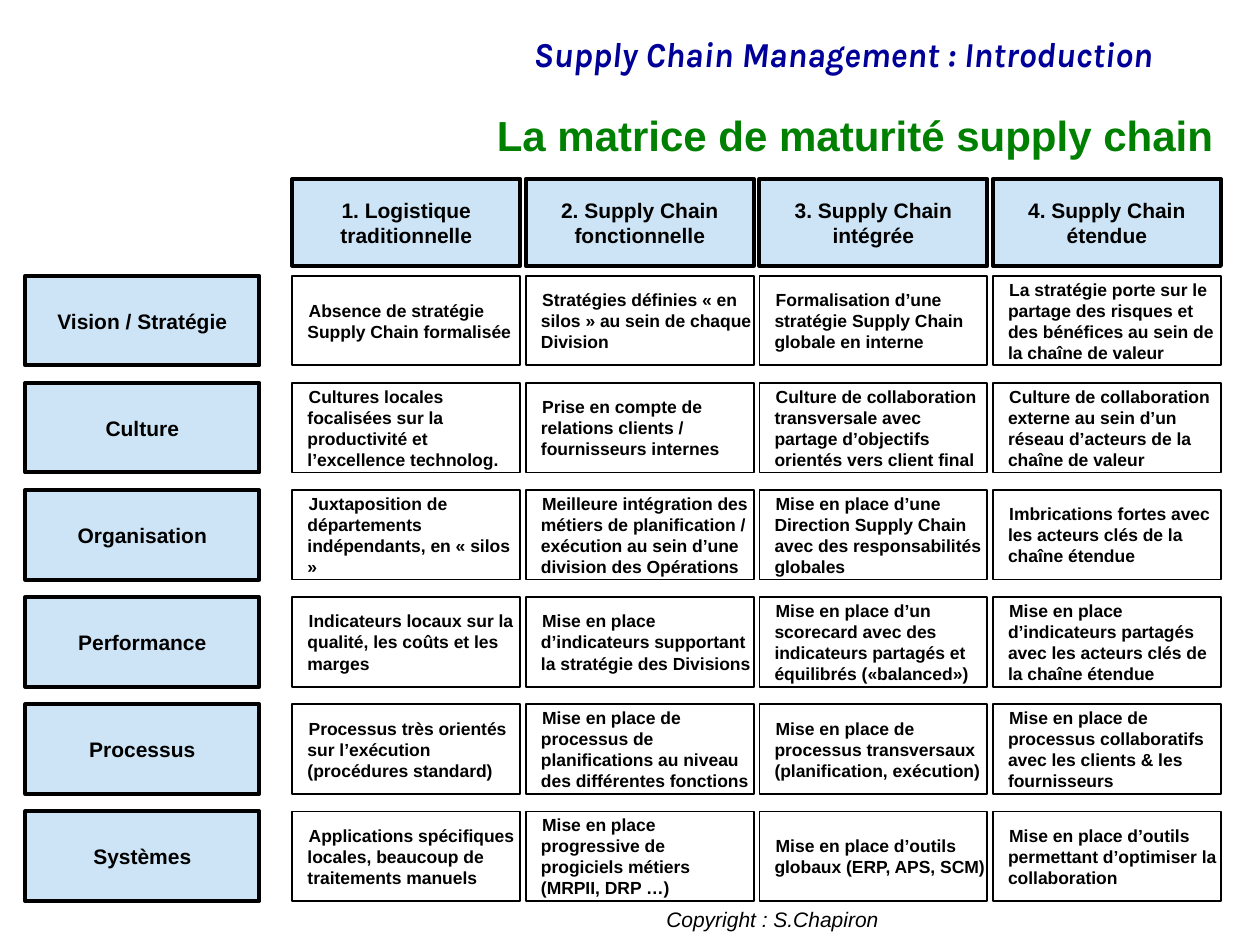
from pptx import Presentation
from pptx.dml.color import RGBColor
from pptx.enum.shapes import MSO_SHAPE
from pptx.enum.text import MSO_ANCHOR, MSO_AUTO_SIZE, PP_ALIGN
from pptx.util import Inches, Pt

BLACK = RGBColor(0x00, 0x00, 0x00)
PALE_BLUE = RGBColor(0xCC, 0xE4, 0xF5)
NAVY = RGBColor(0x00, 0x00, 0x99)
GREEN = RGBColor(0x00, 0x80, 0x00)

STAGES = [
    "1. Logistique\ntraditionnelle",
    "2. Supply Chain\nfonctionnelle",
    "3. Supply Chain\nintégrée",
    "4. Supply Chain\nétendue",
]
MATRIX = {
    "Vision / Stratégie": [
        "Absence de stratégie Supply Chain formalisée",
        "Stratégies définies « en silos » au sein de chaque Division",
        "Formalisation d’une stratégie Supply Chain globale en interne",
        "La stratégie porte sur le partage des risques et des bénéfices au sein de la chaîne de valeur",
    ],
    "Culture": [
        "Cultures locales focalisées sur la productivité et l’excellence technolog.",
        "Prise en compte de relations clients / fournisseurs internes",
        "Culture de collaboration transversale avec partage d’objectifs orientés vers client final",
        "Culture de collaboration externe au sein d’un réseau d’acteurs de la chaîne de valeur",
    ],
    "Organisation": [
        "Juxtaposition de départements indépendants, en « silos »",
        "Meilleure intégration des métiers de planification / exécution au sein d’une division des Opérations",
        "Mise en place d’une Direction Supply Chain avec des responsabilités globales",
        "Imbrications fortes avec les acteurs clés de la chaîne étendue",
    ],
    "Performance": [
        "Indicateurs locaux sur la qualité, les coûts et les marges",
        "Mise en place d’indicateurs supportant la stratégie des Divisions",
        "Mise en place d’un scorecard avec des indicateurs partagés et équilibrés («balanced»)",
        "Mise en place d’indicateurs partagés avec les acteurs clés de la chaîne étendue",
    ],
    "Processus": [
        "Processus très orientés sur l’exécution (procédures standard)",
        "Mise en place de processus de planifications au niveau des différentes fonctions",
        "Mise en place de processus transversaux (planification, exécution)",
        "Mise en place de processus collaboratifs avec les clients & les fournisseurs",
    ],
    "Systèmes": [
        "Applications spécifiques locales, beaucoup de traitements manuels",
        "Mise en place progressive de progiciels métiers (MRPII, DRP …)",
        "Mise en place d’outils globaux (ERP, APS, SCM)",
        "Mise en place d’outils permettant d’optimiser la collaboration",
    ],
}


def write_text(frame, text, size, color=BLACK, font="Arial", bold=True, italic=False,
               align=PP_ALIGN.LEFT, spacing=None, indent=None):
    for index, line in enumerate(text.split("\n")):
        para = frame.paragraphs[0] if index == 0 else frame.add_paragraph()
        para.alignment = align
        if spacing:
            para.line_spacing = spacing
        if indent:
            properties = para._p.get_or_add_pPr()
            properties.set("marL", str(indent))
            properties.set("indent", str(Inches(0.01)))
        span = para.add_run()
        span.text = line
        span.font.name = font
        span.font.size = Pt(size)
        span.font.bold = bold
        span.font.italic = italic
        span.font.color.rgb = color


def add_box(page, left, top, width, height, fill=None, line_width=1):
    box = page.shapes.add_shape(MSO_SHAPE.RECTANGLE, left, top, width, height)
    box.shadow.inherit = False
    if fill is None:
        box.fill.background()
    else:
        box.fill.solid()
        box.fill.fore_color.rgb = fill
    box.line.color.rgb = BLACK
    box.line.width = Pt(line_width)
    frame = box.text_frame
    frame.word_wrap = True
    frame.vertical_anchor = MSO_ANCHOR.MIDDLE
    return frame


def add_heading(page, text, left, top, width, height):
    frame = add_box(page, left, top, width, height, PALE_BLUE, 2.25)
    write_text(frame, text, 12, align=PP_ALIGN.CENTER)


def add_cell(page, text, left, top, width, height):
    frame = add_box(page, left, top, width, height)
    frame.margin_left = frame.margin_right = Inches(0.02)
    frame.margin_top = frame.margin_bottom = Inches(0.04)
    write_text(frame, text, 10, indent=Inches(0.1))


def add_matrix(page, left, top, width, height):
    label_width, cell_width = Inches(1.86), Inches(1.81)
    head_height, row_height = Inches(0.69), Inches(0.71)
    first_column, first_row = left + Inches(2.12), top + Inches(0.77)
    column_step = (left + width - cell_width - first_column) / (len(STAGES) - 1)
    row_step = (top + height - row_height - first_row) / (len(MATRIX) - 1)
    columns = [int(first_column + index * column_step) for index in range(len(STAGES))]

    # Maturity stages across the top
    for stage, column in zip(STAGES, columns):
        add_heading(page, stage, column, top, cell_width, head_height)

    # One row per dimension: label, then its four cells
    for index, (label, cells) in enumerate(MATRIX.items()):
        row = int(first_row + index * row_step)
        add_heading(page, label, left, row, label_width, row_height)
        for text, column in zip(cells, columns):
            add_cell(page, text, column, row, cell_width, row_height)


def add_title(page, left, top, width, height):
    title = page.shapes.title
    title.left, title.top, title.width, title.height = left, top, width, height
    frame = title.text_frame
    frame.auto_size = MSO_AUTO_SIZE.NONE
    frame.vertical_anchor = MSO_ANCHOR.MIDDLE
    write_text(frame, "La matrice de maturité supply chain", 24, color=GREEN,
               align=PP_ALIGN.RIGHT, spacing=0.9)


def add_note(page, text, left, top, width, height, wrap, **style):
    frame = page.shapes.add_textbox(left, top, width, height).text_frame
    frame.word_wrap = wrap
    frame.auto_size = MSO_AUTO_SIZE.SHAPE_TO_FIT_TEXT
    write_text(frame, text, italic=True, spacing=0.9, **style)


def main():
    deck = Presentation()
    deck.slide_width, deck.slide_height = Inches(10), Inches(7.5)
    page = deck.slides.add_slide(deck.slide_layouts[5])

    # Running header
    add_note(page, "Supply Chain Management : Introduction",
             Inches(1.25), Inches(0.25), Inches(8), Inches(0.4), True,
             size=20, color=NAVY, font="Karla", align=PP_ALIGN.RIGHT)
    add_title(page, Inches(1.81), Inches(0.84), Inches(7.92), Inches(0.5))
    add_matrix(page, Inches(0.2), Inches(1.42), Inches(9.49), Inches(5.73))
    # Copyright line
    add_note(page, "Copyright : S.Chapiron",
             Inches(5.19), Inches(7.17), Inches(1.9), Inches(0.28), False,
             size=12, bold=False)
    deck.save("out.pptx")


if __name__ == "__main__":
    main()
